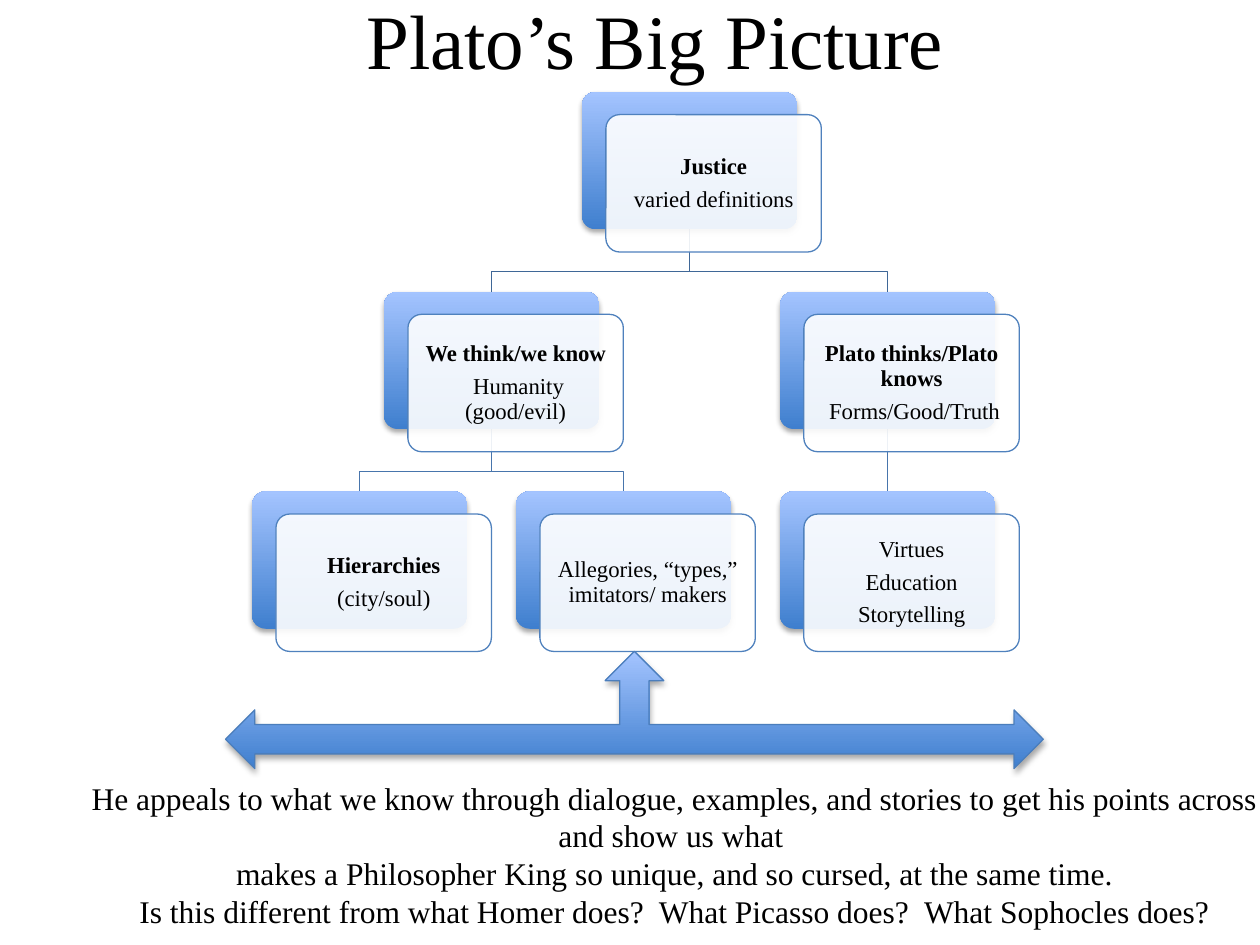
from lxml.etree import SubElement
from pptx import Presentation
from pptx.dml.color import RGBColor
from pptx.enum.shapes import MSO_CONNECTOR, MSO_SHAPE
from pptx.enum.text import MSO_ANCHOR, MSO_AUTO_SIZE, PP_ALIGN
from pptx.oxml.ns import qn
from pptx.util import Inches, Pt

TITLE = "Plato’s Big Picture"
# name: (level, children, [(line, bold), ...])
IDEAS = {
    "justice": (0, ["we", "plato"], [("Justice", True), ("varied definitions", False)]),
    "we": (1, ["hierarchies", "allegories"],
           [("We think/we know", True), (" Humanity (good/evil)", False)]),
    "hierarchies": (2, [], [("Hierarchies", True), ("(city/soul)", False)]),
    "allegories": (2, [], [("Allegories, “types,” imitators/ makers", False)]),
    "plato": (1, ["virtues"],
              [("Plato thinks/Plato knows", True), (" Forms/Good/Truth", False)]),
    "virtues": (2, [], [("Virtues", False), ("Education", False), ("Storytelling", False)]),
}
CONCLUSION = [
    "He appeals to what we know through dialogue, examples, and stories "
    "to get his points across and show us what ",
    "makes a Philosopher King so unique, and so cursed, at the same time.",
    "Is this different from what Homer does?  What Picasso does?  What Sophocles does?",
]
FONT = "Times New Roman"
CARD_W, CARD_H = 1.71, 1.09
LEFT, TOP, COLUMN_STEP, ROW_STEP = 2, 0.73, 2.095, 1.585
FRONT_DX, FRONT_DY = 0.19, 0.18
ELBOW_RISE = 0.16
LINE_COLOURS = ["3F6797", "4875AC"]


def rgb(colour):
    return RGBColor.from_string(colour)


def add_text(paragraph, text, size, bold=None):
    paragraph.alignment = PP_ALIGN.CENTER
    run = paragraph.add_run()
    run.text = text
    run.font.size, run.font.name, run.font.bold = Pt(size), FONT, bold
    run.font.color.rgb = rgb("000000")


def set_line(shape, colour):
    shape.line.color.rgb = rgb(colour)
    shape.line.width = Pt(0.75)


def paint_blue(shape):
    """Vertical blue gradient, light on top, with a soft shadow below."""
    shape.fill.gradient()
    shape.fill.gradient_angle = 90
    for stop, colour in zip(shape.fill.gradient_stops, ("3F7FCE", "A4C4FF")):
        stop.color.rgb = rgb(colour)
    shape.shadow.inherit = False
    effects = shape._element.spPr.find(qn("a:effectLst"))
    shadow = SubElement(effects, qn("a:outerShdw"), blurRad=str(Pt(3.1)),
                        dist=str(Pt(1.8)), dir="5400000", rotWithShape="0")
    black = SubElement(shadow, qn("a:srgbClr"), val="000000")
    SubElement(black, qn("a:alpha"), val="35000")


def add_card(left, top):
    card = slide.shapes.add_shape(MSO_SHAPE.ROUNDED_RECTANGLE, Inches(left), Inches(top),
                                  Inches(CARD_W), Inches(CARD_H))
    card.adjustments[0] = 0.1
    return card


def add_idea(left, top, lines):
    back = add_card(left, top)
    paint_blue(back)
    back.line.fill.background()

    front = add_card(left + FRONT_DX, top + FRONT_DY)
    front.shadow.inherit = False
    front.fill.solid()
    front.fill.fore_color.rgb = rgb("FFFFFF")
    white = front._element.spPr.find(qn("a:solidFill"))[0]
    SubElement(white, qn("a:alpha"), val="90000")
    set_line(front, "4F81BD")

    frame = front.text_frame
    frame.word_wrap = True
    frame.vertical_anchor = MSO_ANCHOR.MIDDLE
    frame.margin_left = frame.margin_right = Inches(0.05)
    frame.margin_top = frame.margin_bottom = Inches(0.05)
    for i, (text, bold) in enumerate(lines):
        paragraph = frame.add_paragraph() if i else frame.paragraphs[0]
        paragraph.line_spacing = 0.9
        paragraph.space_after = Pt(4.55)
        add_text(paragraph, text, 13, bold)


def add_branch(parent, child, colour):
    """Join the bottom centre of the parent to the top centre of the child."""
    x1, y1 = parent[0] + CARD_W / 2, parent[1] + CARD_H
    x2, y2 = child[0] + CARD_W / 2, child[1]
    if abs(x1 - x2) < 0.01:
        branch = slide.shapes.add_connector(MSO_CONNECTOR.STRAIGHT, Inches(x1), Inches(y1),
                                            Inches(x2), Inches(y2))
        SubElement(branch._element.spPr, qn("a:effectLst"))
    else:
        bend = y2 - ELBOW_RISE
        builder = slide.shapes.build_freeform(Inches(x1), Inches(y1))
        builder.add_line_segments([(Inches(x), Inches(y)) for x, y in
                                   ((x1, bend), (x2, bend), (x2, y2))], close=False)
        branch = builder.convert_to_shape()
        branch.fill.background()
        branch.shadow.inherit = False
    set_line(branch, colour)


prs = Presentation()
prs.slide_width, prs.slide_height = Inches(10), Inches(7.5)
slide = prs.slides.add_slide(prs.slide_layouts[5])

title = slide.shapes.title
title.left, title.top, title.width, title.height = map(Inches, (0.7, -0.32, 9, 1.25))
title.text_frame.vertical_anchor = MSO_ANCHOR.MIDDLE
add_text(title.text_frame.paragraphs[0], TITLE, 44)

# Leaves fill the columns in order; each parent is centred over its children.
leaves = [name for name, (_, children, _) in IDEAS.items() if not children]
lefts = {name: LEFT + i * COLUMN_STEP for i, name in enumerate(leaves)}
for name, (_, children, _) in reversed(IDEAS.items()):
    if children:
        lefts[name] = sum(lefts[child] for child in children) / len(children)
places = {name: (lefts[name], TOP + level * ROW_STEP)
          for name, (level, _, _) in IDEAS.items()}

for name, (level, children, _) in IDEAS.items():
    for child in children:
        add_branch(places[name], places[child], LINE_COLOURS[level])
for name, (_, _, lines) in IDEAS.items():
    add_idea(*places[name], lines)

arrow = slide.shapes.add_shape(MSO_SHAPE.LEFT_RIGHT_UP_ARROW, Inches(1.79), Inches(5.17),
                               Inches(6.49), Inches(0.93))
paint_blue(arrow)
set_line(arrow, "4B7EBC")

conclusion = slide.shapes.add_textbox(Inches(0.58), Inches(6.13), Inches(9.55), Inches(1.31))
conclusion.text_frame.word_wrap = True
conclusion.text_frame.auto_size = MSO_AUTO_SIZE.SHAPE_TO_FIT_TEXT
for i, text in enumerate(CONCLUSION):
    frame = conclusion.text_frame
    add_text(frame.add_paragraph() if i else frame.paragraphs[0], text, 18)

prs.save("out.pptx")
